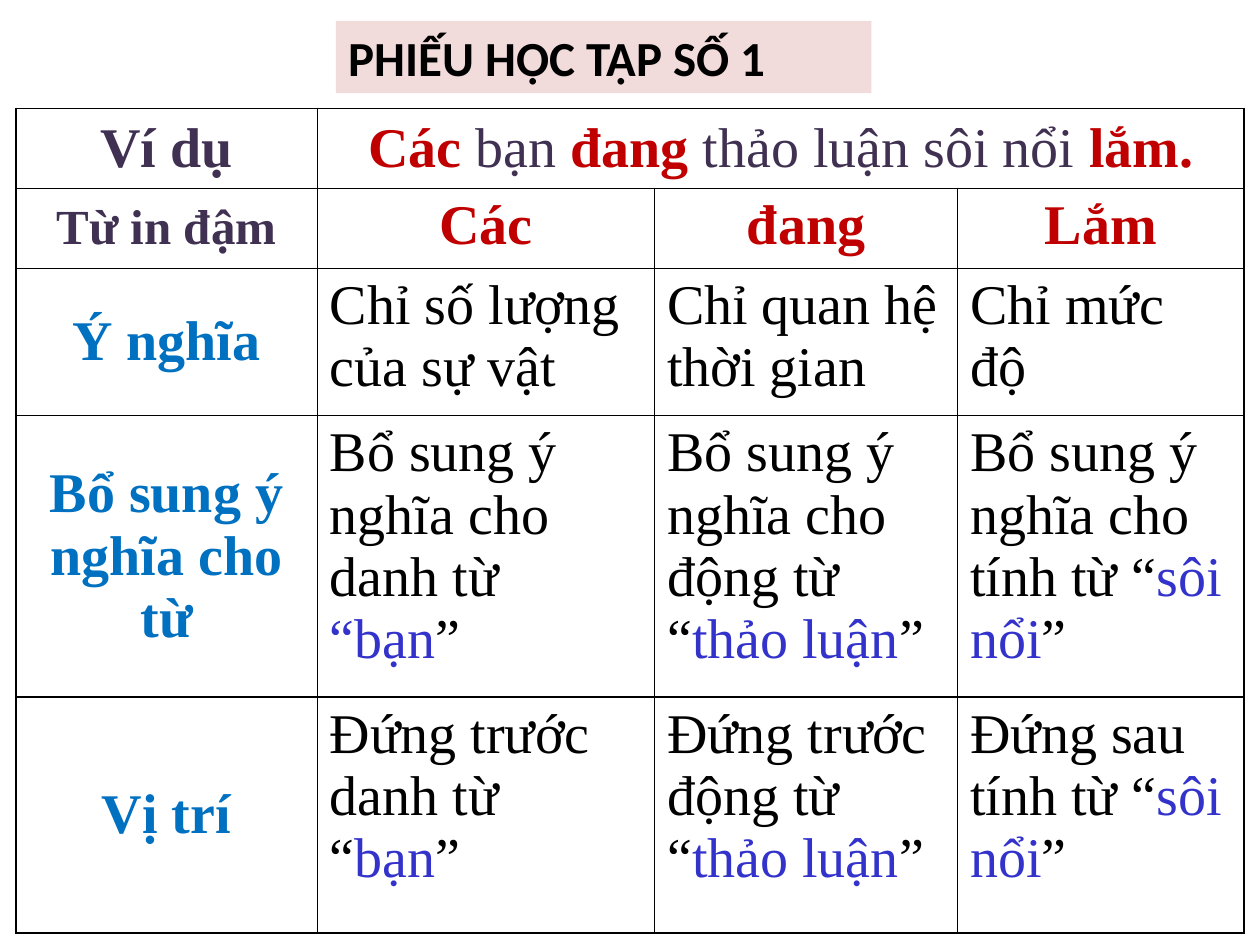
from lxml.etree import SubElement
from pptx import Presentation
from pptx.dml.color import RGBColor
from pptx.enum.text import MSO_ANCHOR, MSO_AUTO_SIZE, PP_ALIGN
from pptx.oxml.ns import qn
from pptx.util import Pt

# Content: each cell is a list of (text, style) runs
TITLE = "PHIẾU HỌC TẬP SỐ 1"
ROWS = [
    [[("Ví dụ", "head")],
     [("Các ", "key"), ("bạn ", "plain"), ("đang ", "key"),
      ("thảo luận sôi nổi ", "plain"), ("lắm.", "key")]],
    [[("Từ in đậm", "small")],
     [("Các", "key")], [("đang", "key")], [("Lắm", "key")]],
    [[("Ý nghĩa", "label")],
     [("Chỉ số lượng của sự vật", "body")],
     [("Chỉ quan hệ thời gian", "body")],
     [("Chỉ mức độ", "body")]],
    [[("Bổ sung ý nghĩa cho từ", "label")],
     [("Bổ sung ý nghĩa cho danh từ ", "body"), ("“bạn", "word"), ("”", "body")],
     [("Bổ sung ý nghĩa cho động từ “", "body"), ("thảo luận", "word"), ("”", "body")],
     [("Bổ sung ý nghĩa cho tính từ “", "body"), ("sôi nổi", "word"), ("”", "body")]],
    [[("Vị trí", "label")],
     [("Đứng trước danh từ “", "body"), ("bạn", "word"), ("”", "body")],
     [("Đứng trước động từ “", "body"), ("thảo luận", "word"), ("”", "body")],
     [("Đứng sau tính từ “", "body"), ("sôi nổi", "word"), ("”", "body")]],
]

# Formats: size, bold, colour
STYLES = {
    "head": (32, True, "403152"),
    "small": (28, True, "403152"),
    "plain": (32, False, "403152"),
    "key": (32, True, "C00000"),
    "label": (32, True, "0070C0"),
    "body": (32, False, "000000"),
    "word": (32, False, "3333CC"),
}
COL_WIDTHS = [172.3, 192.7, 173.3, 163.7]
ROW_HEIGHTS = [45.7, 45.7, 84.2, 160.8, 134.8]
HEADER_ROWS = 2


def rgb(value):
    return RGBColor.from_string(value)


def add_run(p, text, font, size, bold, color):
    r = p.add_run()
    r.text = text
    for name, value in {"name": font, "size": Pt(size), "bold": bold}.items():
        setattr(r.font, name, value)
    r.font.color.rgb = rgb(color)


def add_borders(cell):
    tc_pr = cell._tc.get_or_add_tcPr()
    for side in ("lnL", "lnR", "lnT", "lnB"):
        ln = SubElement(tc_pr, qn(f"a:{side}"), w=str(Pt(1)))
        fill = SubElement(ln, qn("a:solidFill"))
        SubElement(fill, qn("a:srgbClr"), val="000000")


prs = Presentation()
prs.slide_width, prs.slide_height = Pt(720), Pt(540)
s = prs.slides.add_slide(prs.slide_layouts[5])

# Title
sp = s.shapes.title
box = {"left": 192, "top": 12, "width": 306, "height": 41.2}
for name, value in box.items():
    setattr(sp, name, Pt(value))
sp.fill.solid()
sp.fill.fore_color.rgb = rgb("F2DCDB")
tf = sp.text_frame
frame = {"word_wrap": True, "vertical_anchor": MSO_ANCHOR.TOP,
         "auto_size": MSO_AUTO_SIZE.NONE}
for name, value in frame.items():
    setattr(tf, name, value)
p = tf.paragraphs[0]
p.alignment = PP_ALIGN.LEFT
add_run(p, TITLE, "Calibri", 28, True, "000000")

# Table grid
table = s.shapes.add_table(
    len(ROW_HEIGHTS), len(COL_WIDTHS), Pt(9), Pt(61.9),
    Pt(sum(COL_WIDTHS)), Pt(sum(ROW_HEIGHTS))).table
for column, width in zip(table.columns, COL_WIDTHS):
    column.width = Pt(width)
for row, height in zip(table.rows, ROW_HEIGHTS):
    row.height = Pt(height)
table.cell(0, 1).merge(table.cell(0, 3))
for cell in table.iter_cells():
    add_borders(cell)
    cell.fill.background()

# Cell text
for i, row in enumerate(ROWS):
    for j, runs in enumerate(row):
        cell = table.cell(i, j)
        middle = i == 0 or j == 0
        centred = i < HEADER_ROWS or j == 0
        cell.vertical_anchor = MSO_ANCHOR.MIDDLE if middle else MSO_ANCHOR.TOP
        p = cell.text_frame.paragraphs[0]
        p.alignment = PP_ALIGN.CENTER if centred else PP_ALIGN.LEFT
        for text, style in runs:
            add_run(p, text, "Times New Roman", *STYLES[style])

prs.save("out.pptx")
